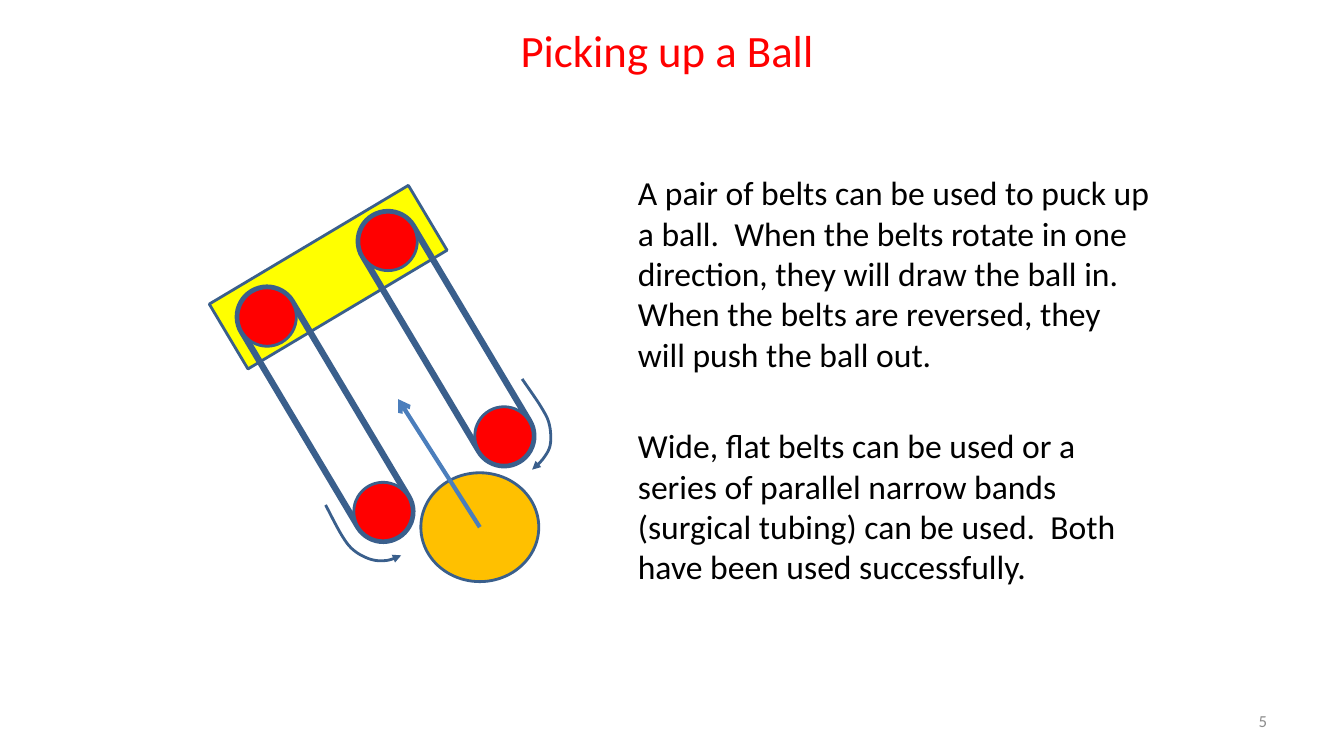
import pptx
import pptx.util
import pptx.dml.color
import pptx.enum.shapes
import pptx.enum.text
import pptx.oxml.ns
import lxml.etree

# The slide is a grid of square cells, 10 to the inch
CELL = pptx.util.Inches(0.1)
COLUMNS, ROWS = 133.33, 75
TILT = 59.2
PULLEY_SIZE = 5.8
FONT = "Calibri"
COLORS = {
    "title": "FF0000",
    "text": "000000",
    "number": "8C8C8C",
    "outline": "3A5F8C",
    "path": "4B7EBC",
    "frame": "FFFF00",
    "pulley": "FF0000",
    "ball": "FFC000",
}
SHAPES = pptx.enum.shapes.MSO_SHAPE
ALIGN = pptx.enum.text.PP_ALIGN
ANCHOR = pptx.enum.text.MSO_ANCHOR

BELT_TEXT = (
    "A pair of belts can be used to puck up a ball.  When the belts rotate in one "
    "direction, they will draw the ball in.  When the belts are reversed, they will "
    "push the ball out."
)
TUBING_TEXT = (
    "Wide, flat belts can be used or a series of parallel narrow bands "
    "(surgical tubing) can be used.  Both have been used successfully."
)
RIGHT_TURN = [(51.8, 37.6), (53.7, 40.4), (54.5, 42.1), (54.6, 44.1), (53.9, 45.5), (52.8, 46.6)]
LEFT_TURN = [(32.3, 50.1), (33.9, 53.1), (35.1, 54.6), (36.8, 55.5), (38.4, 55.6), (39.8, 55.1)]


def cells(*values):
    return [round(value * CELL) for value in values]


def color(name):
    return pptx.dml.color.RGBColor.from_string(COLORS[name])


def style_line(shape, name, width):
    shape.line.color.rgb = color(name)
    shape.line.width = pptx.util.Pt(width)


def add_arrowhead(shape, kind):
    line = shape.line._get_or_add_ln()
    lxml.etree.SubElement(line, pptx.oxml.ns.qn("a:tailEnd"), type=kind)


def write_text(shape, text, size, name, align=ALIGN.LEFT, anchor=ANCHOR.TOP):
    frame = shape.text_frame
    frame.word_wrap = True
    frame.auto_size = pptx.enum.text.MSO_AUTO_SIZE.NONE
    frame.vertical_anchor = anchor
    paragraph = frame.paragraphs[0]
    paragraph.alignment = align
    run = paragraph.add_run()
    run.text = text
    run.font.name = FONT
    run.font.size = pptx.util.Pt(size)
    run.font.color.rgb = color(name)


def add_text(slide, box, *text_style):
    write_text(slide.shapes.add_textbox(*cells(*box)), *text_style)


def add_part(slide, kind, center, size, fill=None, line_width=2, rotation=0):
    (x, y), (width, height) = center, size
    box = cells(x - width / 2, y - height / 2, width, height)
    shape = slide.shapes.add_shape(kind, *box)
    shape.shadow.inherit = False
    shape.rotation = rotation
    if fill:
        shape.fill.solid()
        shape.fill.fore_color.rgb = color(fill)
    else:
        shape.fill.background()
    style_line(shape, "outline", line_width)
    return shape


def add_belt(slide, x, y):
    """A tilted belt around two pulleys, centred on x, y."""
    belt = add_part(slide, SHAPES.ROUNDED_RECTANGLE, (x, y), (28.3, PULLEY_SIZE),
                    line_width=4.5, rotation=TILT)
    belt.adjustments[0] = 0.5
    for side in (-1, 1):
        center = (x + side * 5.75, y + side * 9.65)
        add_part(slide, SHAPES.OVAL, center, (PULLEY_SIZE, PULLEY_SIZE), "pulley")


def smooth_curve(knots, steps=8):
    """Points of a Catmull-Rom curve through the knots."""
    padded = [knots[0], *knots, knots[-1]]
    points = [knots[0]]
    for a, b, c, d in zip(padded, padded[1:], padded[2:], padded[3:]):
        for step in range(1, steps + 1):
            t = step / steps
            points.append(tuple(
                q + t / 2 * (r - p + t * (2 * p - 5 * q + 4 * r - s + t * (3 * (q - r) + s - p)))
                for p, q, r, s in zip(a, b, c, d)
            ))
    return points


def add_turn_arrow(slide, knots):
    start, *rest = [cells(*point) for point in smooth_curve(knots)]
    builder = slide.shapes.build_freeform(*start)
    builder.add_line_segments(rest, close=False)
    shape = builder.convert_to_shape()
    shape.shadow.inherit = False
    shape.fill.background()
    style_line(shape, "outline", 2)
    add_arrowhead(shape, "triangle")


def add_path_arrow(slide, start, end):
    arrow = slide.shapes.add_connector(
        pptx.enum.shapes.MSO_CONNECTOR.STRAIGHT, *cells(*start, *end))
    style_line(arrow, "path", 3)
    add_arrowhead(arrow, "arrow")
    lxml.etree.SubElement(arrow._element.spPr, pptx.oxml.ns.qn("a:effectLst"))


def main():
    presentation = pptx.Presentation()
    presentation.slide_width, presentation.slide_height = cells(COLUMNS, ROWS)
    slide = presentation.slides.add_slide(presentation.slide_layouts[5])

    # Title and slide number
    title = slide.shapes.title
    title.left, title.top, title.width, title.height = cells(21.7, 0.8, 90, 8.3)
    write_text(title, "Picking up a Ball ", 32, "title", ALIGN.CENTER, ANCHOR.MIDDLE)
    add_text(slide, (95.6, 69.5, 31.1, 4), "5", 12, "number", ALIGN.RIGHT, ANCHOR.MIDDLE)

    # Explanation
    add_text(slide, (62.3, 16.6, 53.3, 21.2), BELT_TEXT, 24, "text")
    add_text(slide, (62.3, 41.7, 53.3, 17.2), TUBING_TEXT, 24, "text")

    # Frame with its two belts
    add_part(slide, SHAPES.RECTANGLE, (32.55, 27.5), (7.5, 23), "frame", rotation=TILT)
    for x, y in ((44.25, 33.6), (32.25, 41.1)):
        add_belt(slide, x, y)

    # Ball, its path and the turning directions
    ball_center = (47.6, 52.3)
    add_part(slide, SHAPES.OVAL, ball_center, (11.7, 10.8), "ball")
    add_path_arrow(slide, ball_center, (39.5, 39.6))
    for knots in (RIGHT_TURN, LEFT_TURN):
        add_turn_arrow(slide, knots)

    presentation.save("out.pptx")


if __name__ == "__main__":
    main()
